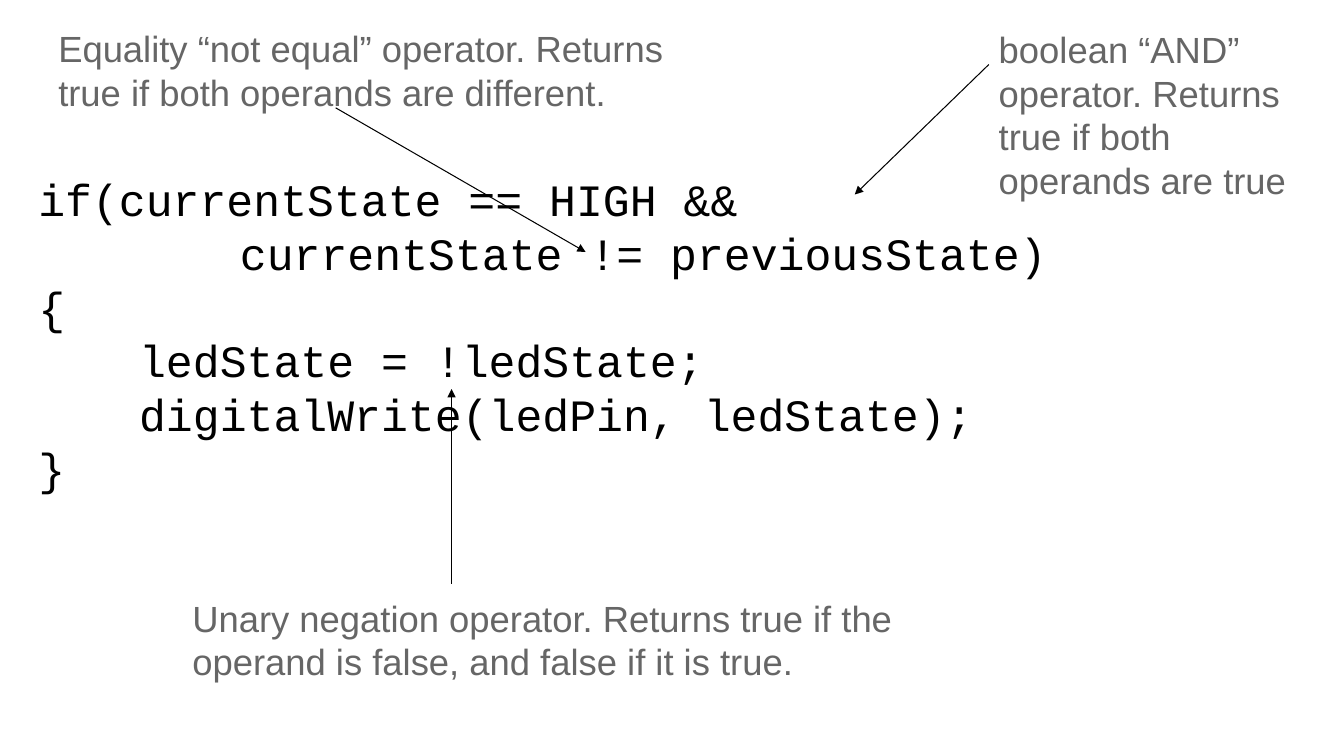
from lxml.etree import SubElement
from pptx import Presentation
from pptx.dml.color import RGBColor
from pptx.enum.shapes import MSO_CONNECTOR
from pptx.enum.text import MSO_ANCHOR, PP_ALIGN
from pptx.oxml.ns import qn
from pptx.util import Inches, Pt

presentation = Presentation()
presentation.slide_width = Inches(13.33)
presentation.slide_height = Inches(7.5)
slide = presentation.slides.add_slide(presentation.slide_layouts[6])

# Grid of 80 columns by 45 rows, about a sixth of an inch each
COLUMN = presentation.slide_width / 80
ROW = presentation.slide_height / 45

CODE_FORMAT = {"name": "Courier New", "size": Pt(32)}
NOTE_FORMAT = {"name": "Arial", "size": Pt(26)}
LINE_SPACING = 1.2

code_lines = [  # indent in inches, text
    (0, "if(currentState == HIGH &&"),
    (2, "currentState != previousState)"),
    (0, "{"),
    (1, "ledState = !ledState;"),
    (1, "digitalWrite(ledPin, ledState);"),
    (0, "}"),
]
notes = [  # text, box (left, top, width, height), arrow (from, to)
    ("boolean “AND” operator. Returns true if both operands are true",
     (58.86, 1.32, 20.58, 11.52), (58.86, 3.84, 50.88, 11.58)),
    ("Equality “not equal” operator. Returns true if both operands are different.",
     (2.88, 1.26, 39.42, 11.52), (19.98, 6.42, 34.86, 15)),
    ("Unary negation operator. Returns true if the operand is false, and false if it is true.",
     (10.86, 35.16, 43.98, 8.16), (26.88, 34.74, 26.88, 23.16)),
]


def on_grid(numbers):
    """Turn alternating columns and rows into slide lengths."""
    return [round(number * unit) for number, unit in zip(numbers, (COLUMN, ROW) * 2)]


def add_text(box, lines, font_format, color):
    """Add a text box with one paragraph per (indent, text) pair."""
    frame = slide.shapes.add_textbox(*on_grid(box)).text_frame
    frame.word_wrap = True
    for index, (indent, text) in enumerate(lines):
        paragraph = frame.add_paragraph() if index else frame.paragraphs[0]
        paragraph.alignment = PP_ALIGN.LEFT
        paragraph.line_spacing = Pt(font_format["size"].pt * LINE_SPACING)
        if indent:
            paragraph._p.get_or_add_pPr().set("marL", str(Inches(indent)))
        run = paragraph.add_run()
        run.text = text
        for attribute, value in font_format.items():
            setattr(run.font, attribute, value)
        run.font.color.rgb = RGBColor.from_string(color)
    return frame


code_frame = add_text((2.28, 1.26, 80, 34.74), code_lines, CODE_FORMAT, "000000")
code_layout = {
    "vertical_anchor": MSO_ANCHOR.MIDDLE,
    "margin_left": 0,
    "margin_right": 0,
    "margin_top": Inches(0.4),
    "margin_bottom": 0,
}
for attribute, value in code_layout.items():
    setattr(code_frame, attribute, value)

for text, box, arrow_ends in notes:
    add_text(box, [(0, text)], NOTE_FORMAT, "666666")
    arrow = slide.shapes.add_connector(MSO_CONNECTOR.STRAIGHT, *on_grid(arrow_ends))
    arrow.line.color.rgb = RGBColor.from_string("000000")
    arrow.line.width = Pt(0.75)
    SubElement(arrow.line._get_or_add_ln(), qn("a:tailEnd"), type="triangle")
    SubElement(arrow._element.spPr, qn("a:effectLst"))

presentation.save("out.pptx")
